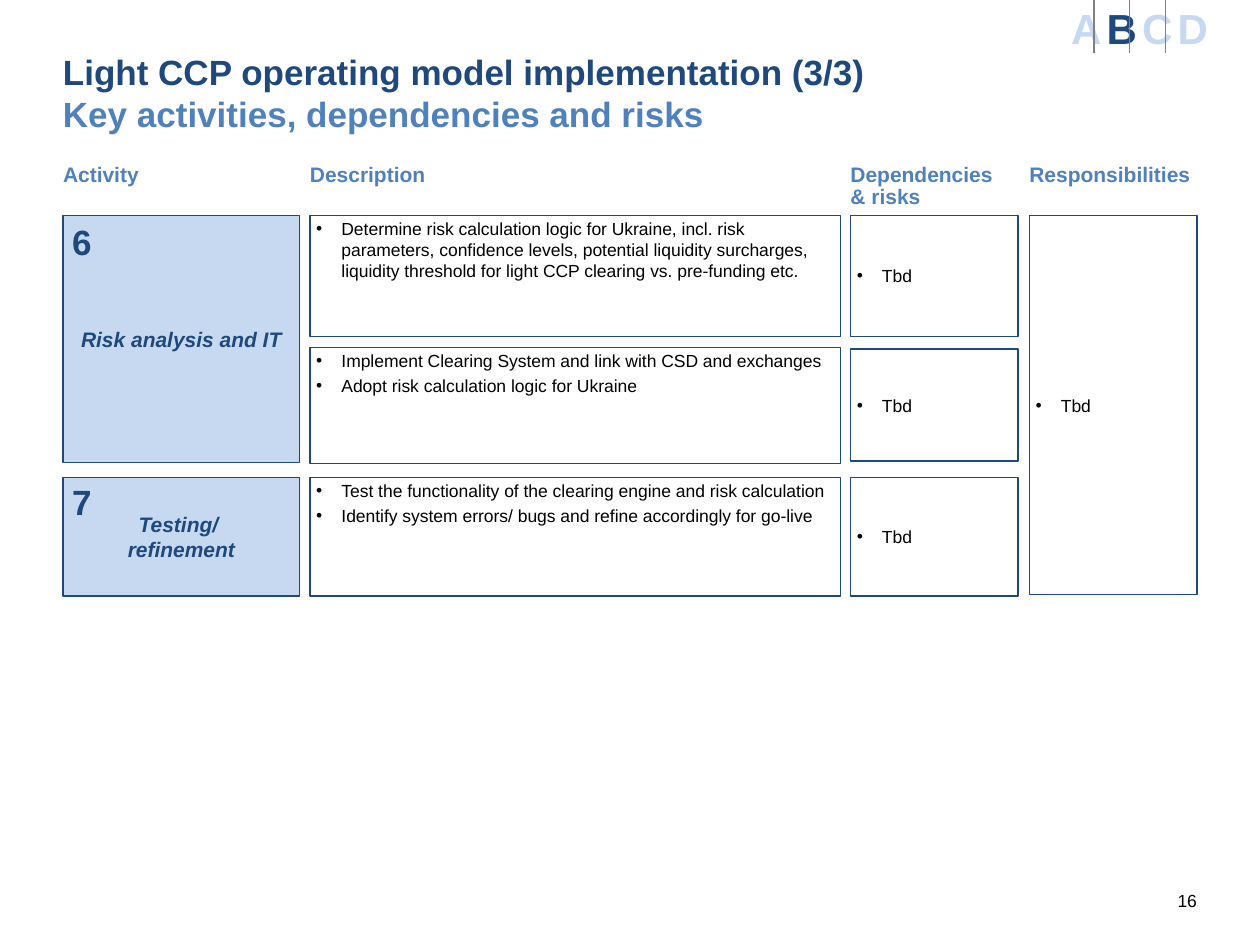
"""Build the slide on key activities, dependencies and risks."""
from copy import deepcopy
from dataclasses import dataclass
from typing import Optional

from lxml import etree
from pptx import Presentation
from pptx import util as u
from pptx.dml.color import RGBColor
from pptx.enum import shapes, text
from pptx.oxml.ns import qn


@dataclass(frozen=True)
class Theme:
    font: str = "Arial"
    navy: str = "1F497D"
    blue: str = "4F81BD"
    pale: str = "C6D9F1"
    black: str = "000000"
    white: str = "FFFFFF"
    grey: str = "808080"
    body: int = 10
    label: int = 12
    title: int = 20
    tracker: int = 24


@dataclass(frozen=True)
class Area:
    left: float
    top: float
    width: float
    height: float


@dataclass(frozen=True)
class Style:
    size: int
    colors: tuple
    bold: bool = True
    italic: bool = False
    align: text.PP_ALIGN = text.PP_ALIGN.LEFT
    anchor: text.MSO_ANCHOR = text.MSO_ANCHOR.TOP
    margins: tuple = (0, 0)
    spacing: Optional[float] = None
    bullet: bool = False
    wrap: bool = True


@dataclass(frozen=True)
class Column:
    heading: str
    left: float
    width: float


@dataclass(frozen=True)
class Row:
    top: float
    height: float
    description: tuple
    risk_top: float
    risk_height: float


@dataclass(frozen=True)
class Activity:
    number: str
    name: str
    top: float
    height: float
    number_top: float


THEME = Theme()
CENTER, MIDDLE = text.PP_ALIGN.CENTER, text.MSO_ANCHOR.MIDDLE
TITLE = Style(THEME.title, (THEME.navy, THEME.blue), anchor=MIDDLE)
HEADING = Style(THEME.label, (THEME.blue,), spacing=0.86)
NAME = Style(THEME.label, (THEME.navy,), italic=True, align=CENTER, anchor=MIDDLE, margins=(0.1, 0.05))
NUMBER = Style(THEME.title, (THEME.navy,), align=CENTER)
BULLETS = Style(THEME.body, (THEME.black,), bold=False, margins=(0.05, 0.02), bullet=True)
TBD = Style(THEME.body, (THEME.black,), bold=False, anchor=MIDDLE, margins=(0.05, 0.02), bullet=True)
PAGE = Style(THEME.body, (THEME.black,), bold=False, align=text.PP_ALIGN.RIGHT, anchor=MIDDLE, wrap=False)

COLUMNS = (
    Column("Activity", 0.5, 1.88),
    Column("Description", 2.46, 4.21),
    Column("Dependencies \v& risks", 6.75, 1.33),
    Column("Responsibilities", 8.17, 1.33),
)
ROWS = (
    Row(1.71, 0.96, (
        "Determine risk calculation logic for Ukraine, incl. risk parameters, confidence levels, "
        "potential liquidity surcharges, liquidity threshold for light CCP clearing vs. pre-funding etc.",
    ), 1.71, 0.96),
    Row(2.76, 0.92, (
        "Implement Clearing System and link with CSD and exchanges",
        "Adopt risk calculation logic for Ukraine",
    ), 2.77, 0.89),
    Row(3.79, 0.94, (
        "Test the functionality of the clearing engine and risk calculation",
        "Identify system errors/ bugs and refine accordingly for go-live",
    ), 3.79, 0.94),
)
ACTIVITIES = (
    Activity("6", "Risk analysis and IT", 1.71, 1.96, 1.75),
    Activity("7", "Testing/ \vrefinement", 3.79, 0.94, 3.81),
)


def place(area: Area) -> tuple:
    """Turn an area into lengths."""
    return tuple(u.Inches(value) for value in (area.left, area.top, area.width, area.height))


def add_bullet(paragraph) -> None:
    """Give a paragraph a hanging bullet."""
    properties = paragraph._p.get_or_add_pPr()
    properties.set("marL", str(u.Inches(0.2)))
    properties.set("indent", str(u.Inches(-0.2)))
    etree.SubElement(properties, qn("a:buFont"), typeface=THEME.font)
    etree.SubElement(properties, qn("a:buChar"), char="•")


def write(frame, lines: tuple, style: Style) -> None:
    """Fill a text frame and format its paragraphs and runs."""
    frame.word_wrap = style.wrap
    frame.vertical_anchor = style.anchor
    frame.margin_left = frame.margin_right = u.Inches(style.margins[0])
    frame.margin_top = frame.margin_bottom = u.Inches(style.margins[1])
    frame.text = "\n".join(lines)
    for index, paragraph in enumerate(frame.paragraphs):
        if style.bullet:
            add_bullet(paragraph)
        paragraph.alignment = style.align
        if index:
            paragraph.space_before = u.Pt(2)
        if style.spacing:
            paragraph.line_spacing = style.spacing
        for position, run in enumerate(paragraph.runs):
            font = run.font
            font.name, font.size = THEME.font, u.Pt(style.size)
            font.bold, font.italic = style.bold, style.italic
            font.color.rgb = RGBColor.from_string(style.colors[position % len(style.colors)])
        for line_break in paragraph._p.findall(qn("a:br")):
            line_break.append(deepcopy(paragraph.runs[0]._r.find(qn("a:rPr"))))


def add_label(slide, area: Area, label: str, style: Style) -> None:
    """Add a plain text box."""
    write(slide.shapes.add_textbox(*place(area)).text_frame, (label,), style)


def add_box(slide, area: Area, lines: tuple, style: Style, fill: Optional[str] = None) -> None:
    """Add an outlined rectangle with text."""
    shape = slide.shapes.add_shape(shapes.MSO_SHAPE.RECTANGLE, *place(area))
    shape.shadow.inherit = False
    if fill:
        shape.fill.solid()
        shape.fill.fore_color.rgb = RGBColor.from_string(fill)
    else:
        shape.fill.background()
    shape.line.color.rgb = RGBColor.from_string(THEME.navy)
    shape.line.width = u.Pt(0.75)
    write(shape.text_frame, lines, style)


def set_border(cell, side: str, visible: bool) -> None:
    """Draw or hide one side of a table cell."""
    line = etree.SubElement(cell._tc.get_or_add_tcPr(), qn(f"a:ln{side}"), w=str(u.Pt(0.75)))
    if visible:
        fill = etree.SubElement(line, qn("a:solidFill"))
        etree.SubElement(fill, qn("a:srgbClr"), val=THEME.grey)
    else:
        etree.SubElement(line, qn("a:noFill"))


def add_tracker(slide, letters: str, current: str) -> None:
    """Add the section tracker with the current letter highlighted."""
    area = Area(8.4, 0, 1.13, 0.42)
    table = slide.shapes.add_table(1, len(letters), *place(area)).table
    table.first_row = table.horz_banding = False
    for index, letter in enumerate(letters):
        cell = table.cell(0, index)
        color = THEME.navy if letter == current else THEME.pale
        write(cell.text_frame, (letter,), Style(THEME.tracker, (color,), align=CENTER))
        cell.margin_left = cell.margin_right = u.Inches(0.1)
        cell.margin_top = cell.margin_bottom = 0
        cell.vertical_anchor = text.MSO_ANCHOR.BOTTOM
        borders = {"L": index > 0, "R": index < len(letters) - 1, "T": False, "B": False}
        for side, visible in borders.items():
            set_border(cell, side, visible)
        cell.fill.background()


def main() -> None:
    """Build and save the presentation."""
    presentation = Presentation()
    presentation.slide_width, presentation.slide_height = u.Inches(10), u.Inches(7.5)
    slide = presentation.slides.add_slide(presentation.slide_layouts[6])
    activity, description, risk, responsibility = COLUMNS

    add_label(slide, Area(9.33, 6.95, 0.17, 0.4), "16", PAGE)
    add_label(slide, Area(0.5, 0.3, 9, 0.87),
              "Light CCP operating model implementation (3/3)\vKey activities, dependencies and risks", TITLE)
    for column in COLUMNS:
        add_label(slide, Area(column.left, 1.31, column.width, 0.37), column.heading, HEADING)
    add_box(slide, Area(responsibility.left, 1.71, responsibility.width, 3.01), ("Tbd",), TBD, THEME.white)
    for item in ACTIVITIES:
        add_box(slide, Area(activity.left, item.top, activity.width, item.height), (item.name,), NAME, THEME.pale)
        add_label(slide, Area(activity.left, item.number_top, 0.3, 0.34), item.number, NUMBER)
    for row in ROWS:
        add_box(slide, Area(description.left, row.top, description.width, row.height), row.description, BULLETS)
        add_box(slide, Area(risk.left, row.risk_top, risk.width, row.risk_height), ("Tbd",), TBD)
    add_tracker(slide, "ABCD", "B")
    presentation.save("out.pptx")


if __name__ == "__main__":
    main()
